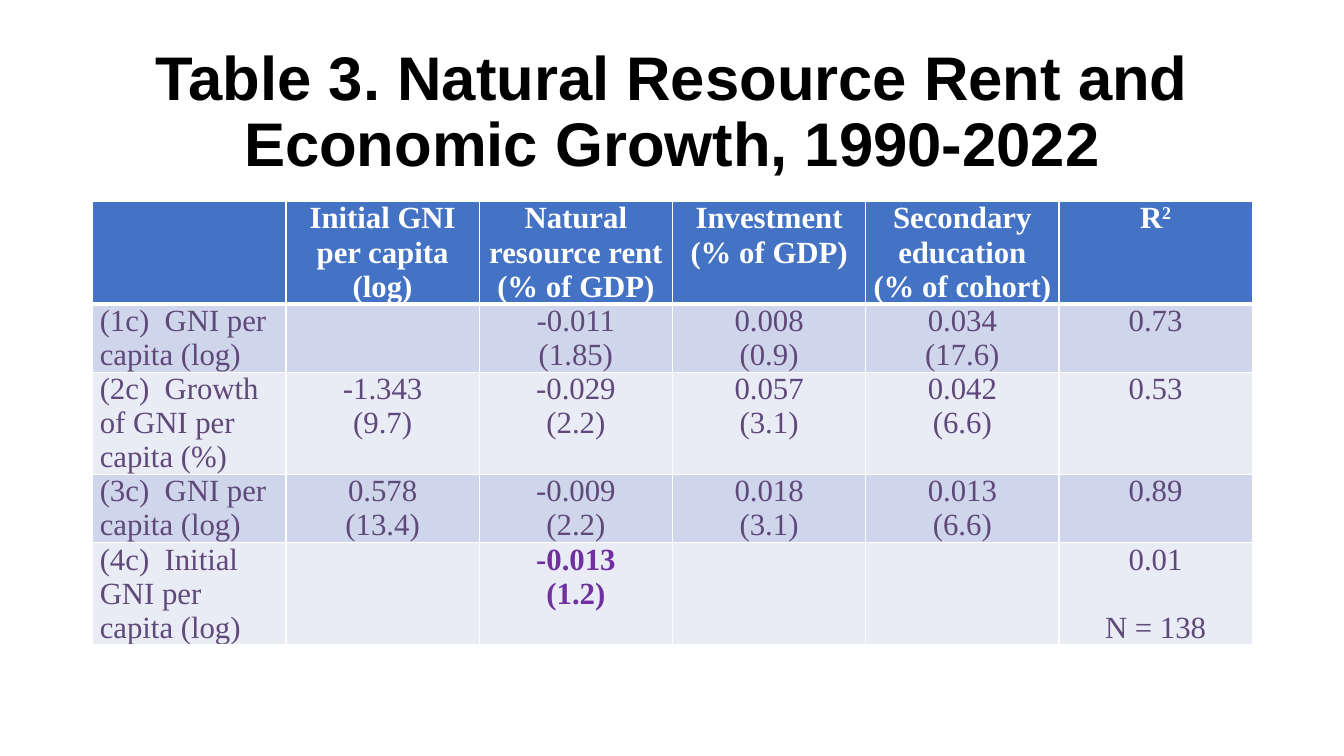
from lxml import etree
from pptx import Presentation
from pptx import util as u
from pptx.dml.color import RGBColor
from pptx.enum import text
from pptx.oxml import ns

WIDTH, HEIGHT = 13.33, 7.5
LEFT, TABLE_WIDTH = 0.92, 11.5
LINE_HEIGHT = 0.33
HEADER, BANDS = "4472C4", ("CFD5EA", "E9EBF5")
WHITE, BLACK, PLUM, PURPLE = "FFFFFF", "000000", "5F497A", "7030A0"


def write(frame, content, size=22, font="Times New Roman", color=PLUM, bold=False,
          align=text.PP_ALIGN.CENTER, spacing=None, gap=0):
    """One paragraph a line; ^ starts a superscript, gap is the space before later lines."""
    for number, line in enumerate(content.split("\n")):
        para = frame.paragraphs[0] if number == 0 else frame.add_paragraph()
        para.alignment = align
        if spacing:
            para.line_spacing = spacing
        if number and gap:
            para.space_before = u.Pt(gap)
        for level, piece in enumerate(line.split("^")):
            span = para.add_run()
            span.text = piece
            span.font.size, span.font.name, span.font.bold = u.Pt(size), font, bold
            span.font.color.rgb = RGBColor.from_string(color)
            if level:
                span._r.get_or_add_rPr().set("baseline", "30000")


def add_borders(cell, **widths):
    for side, points in widths.items():
        line = etree.SubElement(cell._tc.get_or_add_tcPr(), ns.qn(f"a:ln{side}"),
                                w=str(u.Pt(points)))
        fill = etree.SubElement(line, ns.qn("a:solidFill"))
        etree.SubElement(fill, ns.qn("a:srgbClr"), val=WHITE)


deck = Presentation()
deck.slide_width, deck.slide_height = u.Inches(WIDTH), u.Inches(HEIGHT)
page = deck.slides.add_slide(deck.slide_layouts[5])

# Title
title = page.shapes.title
title.left, title.top = u.Inches(LEFT), u.Inches(0.4)
title.width, title.height = u.Inches(TABLE_WIDTH), u.Inches(1.45)
title.text_frame.auto_size = text.MSO_AUTO_SIZE.NONE
title.text_frame.vertical_anchor = text.MSO_ANCHOR.MIDDLE
write(title.text_frame, "Table 3. Natural Resource Rent and Economic Growth, 1990-2022",
      size=44, font="Arial", color=BLACK, bold=True, spacing=0.9)

# Table contents: a coefficient with its t-value below
rows = [
    ["", "Initial GNI per capita (log)", "Natural resource rent (% of GDP)",
     "Investment (% of GDP)", "Secondary education\n(% of cohort)", "R^2"],
    ["(1c)  GNI per capita (log)", "", "-0.011\n(1.85)", "0.008\n(0.9)",
     "0.034\n(17.6)", "0.73"],
    ["(2c)  Growth of GNI per capita (%)", "-1.343\n(9.7)", "-0.029\n(2.2)",
     "0.057\n(3.1)", "0.042\n(6.6)", "0.53"],
    ["(3c)  GNI per capita (log)", "0.578\n(13.4)", "-0.009\n(2.2)",
     "0.018\n(3.1)", "0.013\n(6.6)", "0.89"],
    ["(4c)  Initial GNI per capita (log)", "", "-0.013\n(1.2)", "", "", "0.01\nN = 138"],
]
line_counts = [3, 2, 3, 2, 3]
last_row, last_column = len(rows) - 1, len(rows[0]) - 1

# Table
table = page.shapes.add_table(
    len(rows), len(rows[0]), u.Inches(LEFT), u.Inches(2),
    u.Inches(TABLE_WIDTH), u.Inches(LINE_HEIGHT * sum(line_counts))).table
for r, values in enumerate(rows):
    table.rows[r].height = u.Inches(LINE_HEIGHT * line_counts[r])
    for c, value in enumerate(values):
        cell = table.cell(r, c)
        add_borders(cell, L=1, R=1, T=3 if r == 1 else 1, B=3 if r == 0 else 1)
        cell.fill.solid()
        cell.fill.fore_color.rgb = RGBColor.from_string(BANDS[(r - 1) % 2] if r else HEADER)
        cell.margin_left = cell.margin_right = u.Inches(0.07)
        cell.margin_top = cell.margin_bottom = 0
        if not value:
            continue
        highlight = (r, c) == (last_row, 2)
        write(cell.text_frame, value,
              color=WHITE if r == 0 else PURPLE if highlight else PLUM,
              bold=r == 0 or highlight,
              align=text.PP_ALIGN.CENTER if c else text.PP_ALIGN.LEFT,
              gap=24.4 if (r, c) == (last_row, last_column) else 0)

deck.save("out.pptx")
